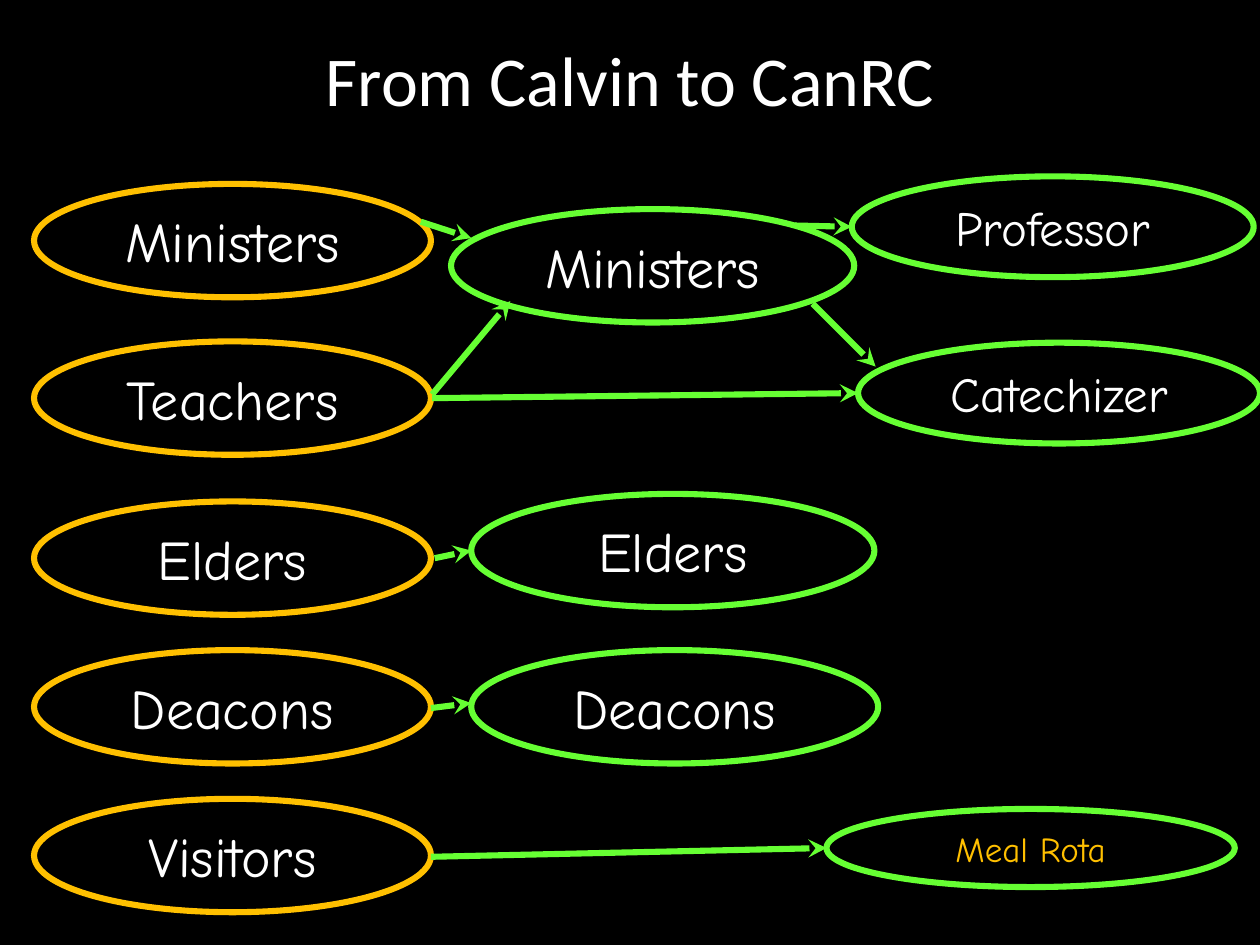
from pptx import Presentation
from pptx.dml.color import RGBColor
from pptx.enum.shapes import MSO_CONNECTOR, MSO_SHAPE
from pptx.enum.text import MSO_ANCHOR, MSO_AUTO_SIZE, PP_ALIGN
from pptx.oxml.ns import qn
from pptx.util import Inches, Pt
from lxml import etree

OVAL = MSO_SHAPE.OVAL
STRAIGHT = MSO_CONNECTOR.STRAIGHT
MIDDLE = MSO_ANCHOR.MIDDLE
GROW = MSO_AUTO_SIZE.SHAPE_TO_FIT_TEXT
CENTER = PP_ALIGN.CENTER

BLACK, WHITE, GOLD, GREEN = "000000", "FFFFFF", "FFC000", "66FF33"
WEIGHT = 3.5

# Content
TITLE = "From Calvin to CanRC"

# Calvin's offices: name, top
CALVIN = [
    ("Ministers", 1.46),
    ("Teachers", 2.71),
    ("Elders", 3.98),
    ("Deacons", 5.16),
    ("Visitors", 6.34),
]

# CanRC offices and tasks: name, (left, top, width, height), size, text colour
CANRC = [
    ("Ministers", (3.58, 1.66, 3.2, 0.9), 32, WHITE),
    ("Elders", (3.74, 3.92, 3.2, 0.9), 32, WHITE),
    ("Deacons", (3.74, 5.16, 3.23, 0.9), 32, WHITE),
    ("Professor", (6.76, 1.4, 3.19, 0.8), 28, WHITE),
    ("Catechizer", (6.81, 2.72, 3.19, 0.8), 28, WHITE),
    ("Meal Rota", (6.56, 6.42, 3.24, 0.62), 20, GOLD),
]

# Arrows: start, end
ARROWS = [
    ((3.34, 1.76), (3.74, 1.89)),  # Ministers to Ministers
    ((3.43, 3.13), (4.05, 2.39)),  # Teachers to Ministers
    ((3.43, 3.16), (6.81, 3.12)),  # Teachers to Catechizer
    ((3.45, 4.43), (3.74, 4.37)),  # Elders to Elders
    ((3.42, 5.62), (3.74, 5.58)),  # Deacons to Deacons
    ((3.42, 6.8), (6.56, 6.73)),   # Visitors to Meal Rota
    ((6.31, 1.79), (6.76, 1.8)),   # Ministers to Professor
    ((6.45, 2.41), (6.95, 2.91)),  # Ministers to Catechizer
]


def rgb(color):
    return RGBColor.from_string(color)


def write(shape, text, size, font, color):
    frame = shape.text_frame
    frame.text = text
    frame.word_wrap = True
    frame.vertical_anchor = MIDDLE
    para = frame.paragraphs[0]
    para.alignment = CENTER
    style = para.runs[0].font
    style.size = Pt(size)
    style.name = font
    style.color.rgb = rgb(color)


def stroke(shape, color):
    shape.line.color.rgb = rgb(color)
    shape.line.width = Pt(WEIGHT)


def add_oval(slide, text, box, size, color, edge):
    oval = slide.shapes.add_shape(OVAL, *map(Inches, box))
    oval.shadow.inherit = False
    oval.fill.background()
    stroke(oval, edge)
    write(oval, text, size, "Comic Neue", color)
    oval.text_frame.auto_size = GROW


def add_arrow(slide, start, end):
    arrow = slide.shapes.add_connector(STRAIGHT, *map(Inches, start + end))
    stroke(arrow, GREEN)
    props = arrow.element.spPr
    tail = etree.SubElement(props.find(qn("a:ln")), qn("a:tailEnd"))
    tail.set("type", "stealth")
    etree.SubElement(props, qn("a:effectLst"))


def main():
    deck = Presentation()
    deck.slide_width, deck.slide_height = Inches(10), Inches(7.5)
    slide = deck.slides.add_slide(deck.slide_layouts[6])
    fill = slide.background.fill
    fill.solid()
    fill.fore_color.rgb = rgb(BLACK)

    # Title
    title = slide.shapes.add_textbox(0, 0, Inches(10), Inches(1.25))
    write(title, TITLE, 40, "Calibri", WHITE)

    # Offices
    for name, top in CALVIN:
        add_oval(slide, name, (0.27, top, 3.15, 0.9), 32, WHITE, GOLD)
    for name, box, size, color in CANRC:
        add_oval(slide, name, box, size, color, GREEN)

    # Links
    for start, end in ARROWS:
        add_arrow(slide, start, end)

    deck.save("out.pptx")


if __name__ == "__main__":
    main()
